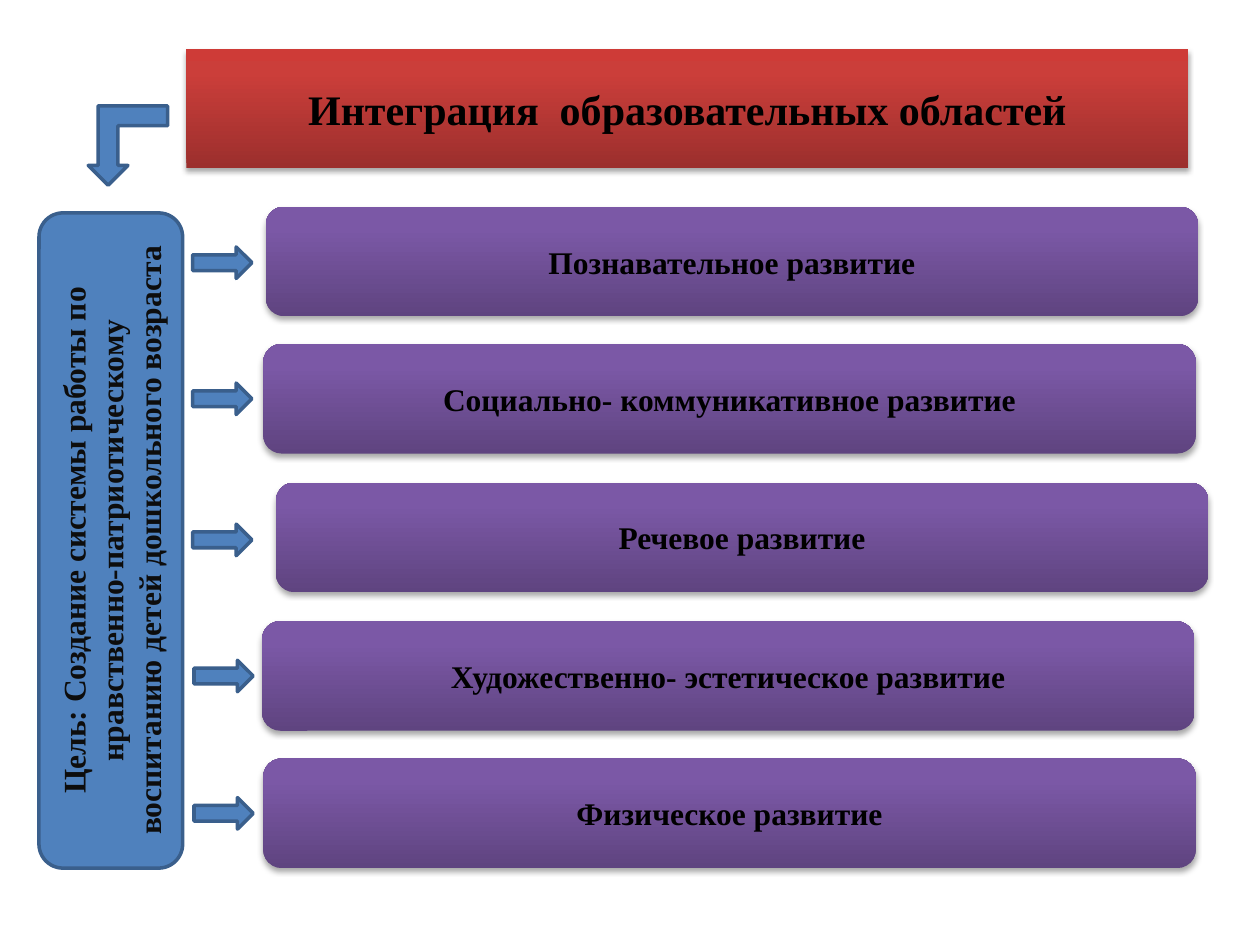
from copy import deepcopy

from pptx import Presentation
from pptx.dml.color import RGBColor
from pptx.enum.shapes import MSO_SHAPE
from pptx.enum.text import MSO_ANCHOR, MSO_AUTO_SIZE, PP_ALIGN
from pptx.oxml import parse_xml
from pptx.oxml.ns import nsdecls, qn
from pptx.util import Inches, Pt

RED = ["9C2F2D", "CB3E3A", "CE3B37"]
PURPLE = ["5F4480", "7B58A6", "7C57A8"]
BLUE = ["4F81BD"]
SHADOW = (
    f'<a:outerShdw {nsdecls("a")} blurRad="40000" dist="23000" dir="5400000" rotWithShape="0">'
    '<a:srgbClr val="000000"><a:alpha val="35000"/></a:srgbClr></a:outerShdw>'
)


def paint(shape, colors):
    shape.shadow.inherit = False
    if len(colors) == 1:
        shape.fill.solid()
        shape.fill.fore_color.rgb = RGBColor.from_string(colors[0])
        shape.line.color.rgb = RGBColor.from_string("3A5F8C")
        shape.line.width = Pt(2)
        return
    shape.line.fill.background()
    shape.fill.gradient()
    shape.fill.gradient_angle = 90
    properties = shape._element.spPr
    stop_list = properties.find(".//" + qn("a:gsLst"))
    stop_list.append(deepcopy(stop_list[-1]))
    for stop, position, color in zip(shape.fill.gradient_stops, [0, 0.8, 1], colors):
        stop.position = position
        stop.color.rgb = RGBColor.from_string(color)
    properties.find(qn("a:effectLst")).append(parse_xml(SHADOW))


def write(shape, text, size, color):
    frame = shape.text_frame
    frame.word_wrap = True
    frame.auto_size = MSO_AUTO_SIZE.NONE
    frame.vertical_anchor = MSO_ANCHOR.MIDDLE
    paragraph = frame.paragraphs[0]
    paragraph.alignment = PP_ALIGN.CENTER
    run = paragraph.add_run()
    run.text = text
    run.font.name = "Times New Roman"
    run.font.size = Pt(size)
    run.font.bold = True
    run.font.color.rgb = RGBColor.from_string(color)


presentation = Presentation()
presentation.slide_width = Inches(10)
presentation.slide_height = Inches(7.5)
slide = presentation.slides.add_slide(presentation.slide_layouts[5])
shapes = slide.shapes

title = shapes.title
title.left, title.top = Inches(1.48), Inches(0.39)
title.width, title.height = Inches(7.95), Inches(0.94)
paint(title, RED)
write(title, "Интеграция  образовательных областей", 24, "000000")

goal = shapes.add_shape(
    MSO_SHAPE.ROUNDED_RECTANGLE, Inches(0.31), Inches(1.69), Inches(1.14), Inches(5.2)
)
paint(goal, BLUE)
goal.text_frame._txBody.bodyPr.set("vert", "vert270")
goal_text = (
    "Цель: Создание системы работы по нравственно-патриотическому "
    "воспитанию детей дошкольного возраста"
)
write(goal, goal_text, 18, "0D0D0D")

bent_arrow = shapes.add_shape(
    MSO_SHAPE.BENT_UP_ARROW, Inches(0.7), Inches(0.84), Inches(0.63), Inches(0.63)
)
bent_arrow.rotation = 180
paint(bent_arrow, BLUE)

areas = [
    ("Познавательное развитие", 2.11, 1.64, 1.53, 1.96),
    ("Социально- коммуникативное развитие", 2.09, 2.73, 1.53, 3.04),
    ("Речевое развитие", 2.19, 3.83, 1.53, 4.16),
    ("Художественно- эстетическое развитие", 2.08, 4.93, 1.54, 5.24),
    ("Физическое развитие", 2.09, 6.02, 1.54, 6.33),
]
for name, left, top, arrow_left, arrow_top in areas:
    area = shapes.add_shape(
        MSO_SHAPE.ROUNDED_RECTANGLE, Inches(left), Inches(top), Inches(7.4), Inches(0.87)
    )
    paint(area, PURPLE)
    write(area, name, 18, "000000")
    arrow = shapes.add_shape(
        MSO_SHAPE.RIGHT_ARROW, Inches(arrow_left), Inches(arrow_top), Inches(0.47), Inches(0.25)
    )
    paint(arrow, BLUE)

presentation.save("out.pptx")
